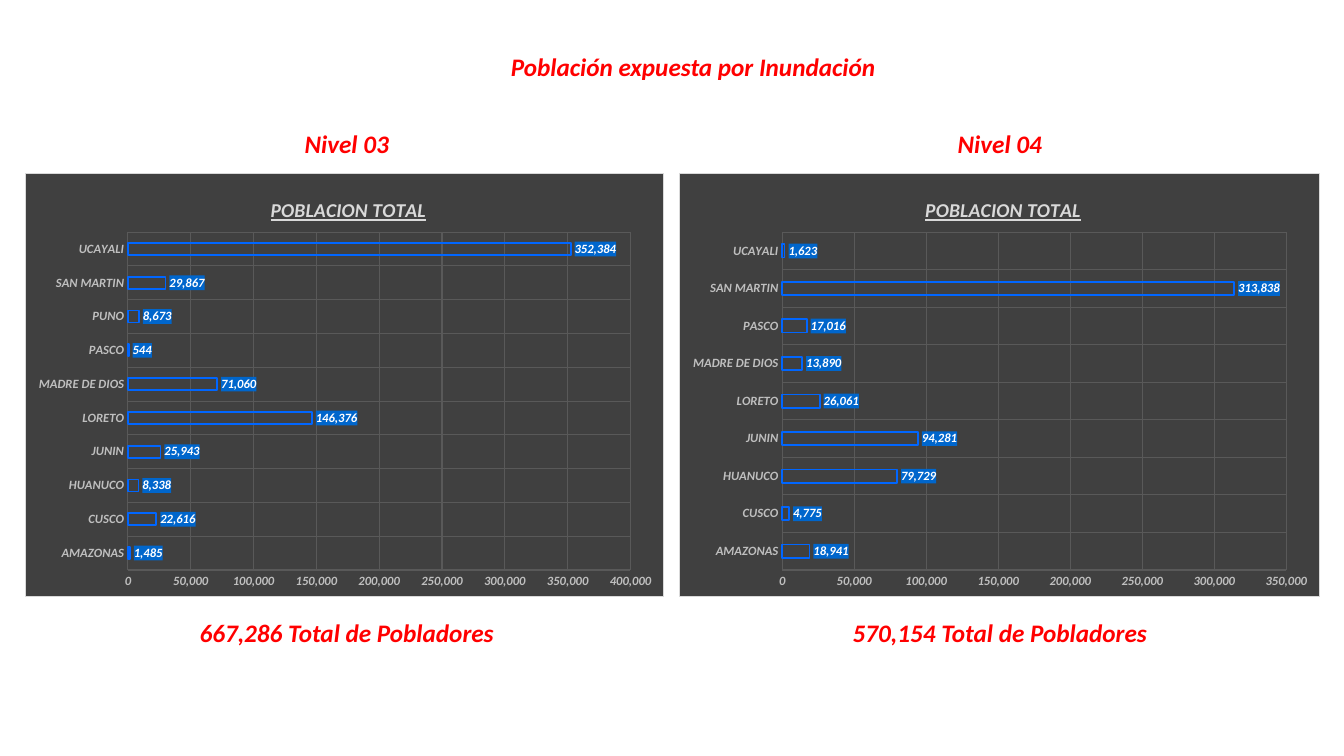
import pptx
import pptx.chart.data
import pptx.dml.color
import pptx.enum.chart
import pptx.enum.text
import pptx.oxml
import pptx.oxml.ns
import pptx.util

Cm = pptx.util.Cm
Pt = pptx.util.Pt
qn = pptx.oxml.ns.qn
COLORS = {
    "heading": "FF0000",
    "panel": "404040",
    "border": "D9D9D9",
    "axis": "BFBFBF",
    "grid": "595959",
    "bar": "0066FF",
    "label": "0066CC",
    "white": "FFFFFF",
}


def style_font(font, size, color, **extra):
    values = {"name": "Calibri", "size": Pt(size), "bold": True, "italic": True, **extra}
    for attribute, value in values.items():
        setattr(font, attribute, value)
    font.color.rgb = pptx.dml.color.RGBColor.from_string(COLORS[color])


def parse_chart_xml(tag, content):
    return pptx.oxml.parse_xml(
        f'<c:{tag} {pptx.oxml.ns.nsdecls("c", "a")}>{content}</c:{tag}>'
    )


deck = pptx.Presentation()
deck.slide_width = Cm(33.87)
deck.slide_height = Cm(19.05)
page = deck.slides.add_slide(deck.slide_layouts[6])

captions = [("Población expuesta por Inundación", 12.57, 1.17, 9.8, False)]
panels = [
    {
        "level": "Nivel 03",
        "total": "667,286 Total de Pobladores",
        "left": 0.64,
        "width": 16.1,
        "caption_center": 8.74,
        "population": {
            "AMAZONAS": 1485, "CUSCO": 22616, "HUANUCO": 8338, "JUNIN": 25943,
            "LORETO": 146376, "MADRE DE DIOS": 71060, "PASCO": 544, "PUNO": 8673,
            "SAN MARTIN": 29867, "UCAYALI": 352384,
        },
        "maximum": 400000,
    },
    {
        "level": "Nivel 04",
        "total": "570,154 Total de Pobladores",
        "left": 17.12,
        "width": 16.15,
        "caption_center": 25.2,
        "population": {
            "AMAZONAS": 18941, "CUSCO": 4775, "HUANUCO": 79729, "JUNIN": 94281,
            "LORETO": 26061, "MADRE DE DIOS": 13890, "PASCO": 17016,
            "SAN MARTIN": 313838, "UCAYALI": 1623,
        },
        "maximum": 350000,
    },
]
for panel in panels:
    for text, top, width in ((panel["level"], 3.12, 2.74), (panel["total"], 15.44, 8.08)):
        captions.append((text, panel["caption_center"] - width / 2, top, width, True))

for text, left, top, width, wrap in captions:
    box = page.shapes.add_textbox(Cm(left), Cm(top), Cm(width), Cm(1.02))
    box.text_frame.word_wrap = wrap
    box.text_frame.auto_size = pptx.enum.text.MSO_AUTO_SIZE.SHAPE_TO_FIT_TEXT
    para = box.text_frame.paragraphs[0]
    para.alignment = pptx.enum.text.PP_ALIGN.CENTER
    span = para.add_run()
    span.text = text
    style_font(span.font, 18, "heading")

for panel in panels:
    data = pptx.chart.data.CategoryChartData(number_format="#,##0")
    data.categories = list(panel["population"])
    data.add_series("Series 1", list(panel["population"].values()))
    chart = page.shapes.add_chart(
        pptx.enum.chart.XL_CHART_TYPE.BAR_CLUSTERED,
        Cm(panel["left"]), Cm(4.37), Cm(panel["width"]), Cm(10.67), data,
    ).chart
    chart.has_legend = False
    chart.font.name = "Calibri"
    chart.font.size = Pt(10)

    chart.has_title = True
    para = chart.chart_title.text_frame.paragraphs[0]
    span = para.add_run()
    span.text = "POBLACION TOTAL"
    style_font(span.font, 14, "border", underline=True)
    chart.chart_title.include_in_layout = False

    for axis in (chart.category_axis, chart.value_axis):
        axis.major_tick_mark = pptx.enum.chart.XL_TICK_MARK.NONE
        axis.minor_tick_mark = pptx.enum.chart.XL_TICK_MARK.NONE
        axis.format.line.fill.background()
        axis.has_major_gridlines = True
        grid = axis.major_gridlines.format.line
        grid.width = Pt(0.75)
        grid.color.rgb = pptx.dml.color.RGBColor.from_string(COLORS["grid"])
        style_font(axis.tick_labels.font, 9, "axis")
    chart.value_axis.minimum_scale = 0
    chart.value_axis.maximum_scale = panel["maximum"]
    chart.value_axis.major_unit = 50000
    chart.value_axis.tick_labels.number_format = "#,##0"
    chart.value_axis.tick_labels.number_format_is_linked = False

    plot = chart.plots[0]
    plot.vary_by_categories = False
    plot.gap_width = 182
    plot.overlap = -50
    bars = plot.series[0]
    bars.invert_if_negative = False
    bars.format.fill.background()
    bars.format.line.width = Pt(1.25)
    bars.format.line.color.rgb = pptx.dml.color.RGBColor.from_string(COLORS["bar"])

    labels = bars.data_labels
    label_values = {
        "show_value": True,
        "number_format": "#,##0",
        "number_format_is_linked": False,
        "position": pptx.enum.chart.XL_LABEL_POSITION.OUTSIDE_END,
    }
    for attribute, value in label_values.items():
        setattr(labels, attribute, value)
    style_font(labels.font, 9, "white")

    root = chart.element
    fills = {
        name: f'<a:solidFill><a:srgbClr val="{COLORS[name]}"/></a:solidFill>'
        for name in ("label", "panel", "border")
    }
    root.find(".//" + qn("c:dLbls") + "/" + qn("c:txPr")).addprevious(
        parse_chart_xml("spPr", fills["label"])
    )
    root.find(qn("c:txPr")).addprevious(
        parse_chart_xml("spPr", f'{fills["panel"]}<a:ln w="9525">{fills["border"]}</a:ln>')
    )

    layouts = (
        ("c:title", 1, "", {"x": 0.378, "y": 0.045}),
        ("c:plotArea", 0, '<c:layoutTarget val="inner"/>',
         {"x": 0.16, "y": 0.138, "w": 0.788, "h": 0.8}),
    )
    for tag, index, target, fractions in layouts:
        parent = root.find(qn("c:chart")).find(qn(tag))
        for layout in parent.findall(qn("c:layout")):
            parent.remove(layout)
        modes = "".join(f'<c:{key}Mode val="edge"/>' for key in fractions if key in "xy")
        places = "".join(f'<c:{key} val="{value}"/>' for key, value in fractions.items())
        parent.insert(index, parse_chart_xml(
            "layout", f"<c:manualLayout>{target}{modes}{places}</c:manualLayout>"
        ))

deck.save("out.pptx")
